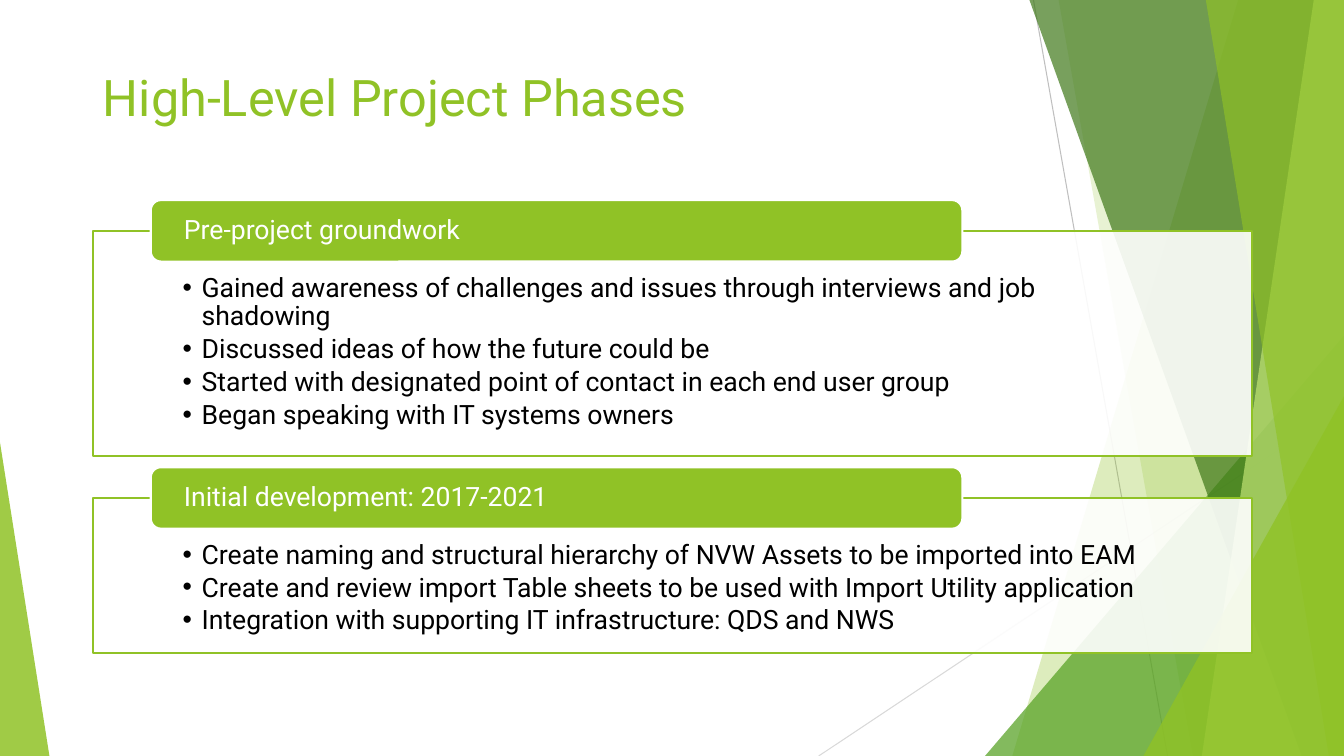
from lxml import etree
from pptx import Presentation
from pptx import util as u
from pptx.dml.color import RGBColor
from pptx.enum import shapes, text
from pptx.oxml import ns

W, H = u.Inches(13.33), u.Inches(7.5)
FONT = "Roboto"
GREEN = RGBColor(0x90, 0xC2, 0x26)
MID_GREEN = RGBColor(0x54, 0xA0, 0x21)
DARK_GREEN = RGBColor(0x3F, 0x78, 0x19)
PALE_GREEN = RGBColor(0xC0, 0xE4, 0x74)
GREY = RGBColor(0xBF, 0xBF, 0xBF)
LIGHT_GREY = RGBColor(0xD9, 0xD9, 0xD9)
WHITE = RGBColor(0xFF, 0xFF, 0xFF)
BLACK = RGBColor(0, 0, 0)

LEFT, WIDTH = u.Inches(0.92), u.Inches(11.5)
PHASES = [
    (2.29, 2.23, "Pre-project groundwork", [
        "Gained awareness of challenges and issues through interviews and job shadowing",
        "Discussed ideas of how the future could be",
        "Started with designated point of contact in each end user group",
        "Began speaking with IT systems owners",
    ]),
    (4.94, 1.54, "Initial development: 2017-2021", [
        "Create naming and structural hierarchy of NVW Assets to be imported into EAM",
        "Create and review import Table sheets to be used with Import Utility application",
        "Integration with supporting IT infrastructure: QDS and NWS",
    ]),
]


def paint(sp, color, alpha=100):
    sp.fill.solid()
    sp.fill.fore_color.rgb = color
    if alpha < 100:
        clr = sp.fill._xPr.find(".//" + ns.qn("a:srgbClr"))
        etree.SubElement(clr, ns.qn("a:alpha")).set("val", str(alpha * 1000))


def outline(sp, color):
    sp.line.color.rgb = color
    sp.line.width = u.Pt(1.5)


def set_insets(tf, left, top, right, bottom):
    tf.margin_left, tf.margin_top = u.Inches(left), u.Inches(top)
    tf.margin_right, tf.margin_bottom = u.Inches(right), u.Inches(bottom)


def add_run(p, words, size, color):
    r = p.add_run()
    r.text = words
    r.font.name = FONT
    r.font.size = u.Pt(size)
    r.font.color.rgb = color


def add_hairline(s, start, end, color):
    line = s.shapes.add_connector(
        shapes.MSO_CONNECTOR.STRAIGHT, *(u.Inches(v) for v in start + end))
    line.line.color.rgb = color
    line.line.width = u.Pt(0.75)
    etree.SubElement(line.element.spPr, ns.qn("a:effectLst"))


def add_band(s, top_left, top_right, bottom_left, color, alpha):
    pen = s.shapes.build_freeform(u.Inches(top_left), 0)
    pen.add_line_segments(
        [(u.Inches(top_right), 0), (W, H), (u.Inches(bottom_left), H)])
    sp = pen.convert_to_shape()
    sp.shadow.inherit = False
    sp.line.fill.background()
    paint(sp, color, alpha)


def add_wedge(s, left, top, right, apex, color, alpha):
    x, y = u.Inches(left), u.Inches(top)
    sp = s.shapes.add_shape(
        shapes.MSO_SHAPE.ISOSCELES_TRIANGLE, x, y, u.Inches(right) - x, H - y)
    sp.adjustments[0] = apex
    sp.shadow.inherit = False
    sp.line.fill.background()
    paint(sp, color, alpha)


def add_backdrop(s):
    add_hairline(s, (10.25, 0), (11.58, 7.5), GREY)
    add_hairline(s, (13.33, 4.03), (8.12, 7.5), LIGHT_GREY)
    add_band(s, 12.28, 13.33, 10.04, GREEN, 30)
    add_band(s, 10.5, 13.33, 11.83, GREEN, 20)
    add_wedge(s, 9.77, 3.33, 13.33, 1, MID_GREEN, 72)
    add_band(s, 10.21, 13.33, 12.91, DARK_GREEN, 70)
    add_band(s, 13.03, 13.33, 11.92, PALE_GREEN, 70)
    add_band(s, 11.96, 13.33, 13.18, GREEN, 65)
    add_wedge(s, 11.34, 3.93, 13.33, 1, GREEN, 80)
    add_wedge(s, 0, 4.39, 0.49, 0, GREEN, 85)


def place(sp, x, y, w, h):
    sp.left, sp.top, sp.width, sp.height = x, y, w, h
    sp.text_frame.auto_size = text.MSO_AUTO_SIZE.NONE
    sp.text_frame.word_wrap = True


def fill_title(title, x, y, w, h):
    place(title, x, y, w, h)
    tf = title.text_frame
    tf.vertical_anchor = text.MSO_ANCHOR.TOP
    p = tf.paragraphs[0]
    p.alignment = text.PP_ALIGN.LEFT
    add_run(p, "High-Level Project Phases", 36, GREEN)


def fill_list(body, items):
    tf = body.text_frame
    tf.vertical_anchor = text.MSO_ANCHOR.TOP
    set_insets(tf, 0.89, 0.43, 0.89, 0.15)
    for i, item in enumerate(items):
        p = tf.add_paragraph() if i else tf.paragraphs[0]
        pPr = p._p.get_or_add_pPr()
        pPr.set("marL", str(u.Inches(0.19)))
        pPr.set("indent", str(-u.Inches(0.19)))
        etree.SubElement(pPr, ns.qn("a:buChar")).set("char", "•")
        p.line_spacing = 0.9
        p.space_before = u.Pt(0)
        p.space_after = u.Pt(2.85)
        add_run(p, item, 19, BLACK)


def add_phase(s, body, x, y, w, h, heading, items):
    place(body, x, y, w, h)
    paint(body, WHITE, 90)
    outline(body, GREEN)
    fill_list(body, items)
    tab_h = u.Inches(0.61)
    tab = s.shapes.add_shape(
        shapes.MSO_SHAPE.ROUNDED_RECTANGLE,
        x + int(w * 0.05), y - tab_h // 2, int(w * 0.7), tab_h)
    tab.shadow.inherit = False
    paint(tab, GREEN)
    outline(tab, WHITE)
    tf = tab.text_frame
    tf.word_wrap = True
    tf.vertical_anchor = text.MSO_ANCHOR.MIDDLE
    set_insets(tf, 0.3, 0, 0.3, 0)
    p = tf.paragraphs[0]
    p.alignment = text.PP_ALIGN.LEFT
    p.line_spacing = 0.9
    add_run(p, heading, 19, WHITE)


def main():
    prs = Presentation()
    prs.slide_width, prs.slide_height = W, H
    s = prs.slides.add_slide(prs.slide_layouts.get_by_name("Two Content"))
    title, *bodies = list(s.placeholders)
    add_backdrop(s)
    for ph in (title, *bodies):
        s.shapes.element.append(ph.element)
    fill_title(title, LEFT, u.Inches(0.61), WIDTH, u.Inches(1.24))
    for body, (top, height, heading, items) in zip(bodies, PHASES):
        add_phase(s, body, LEFT, u.Inches(top), WIDTH, u.Inches(height), heading, items)
    prs.save("out.pptx")


if __name__ == "__main__":
    main()
